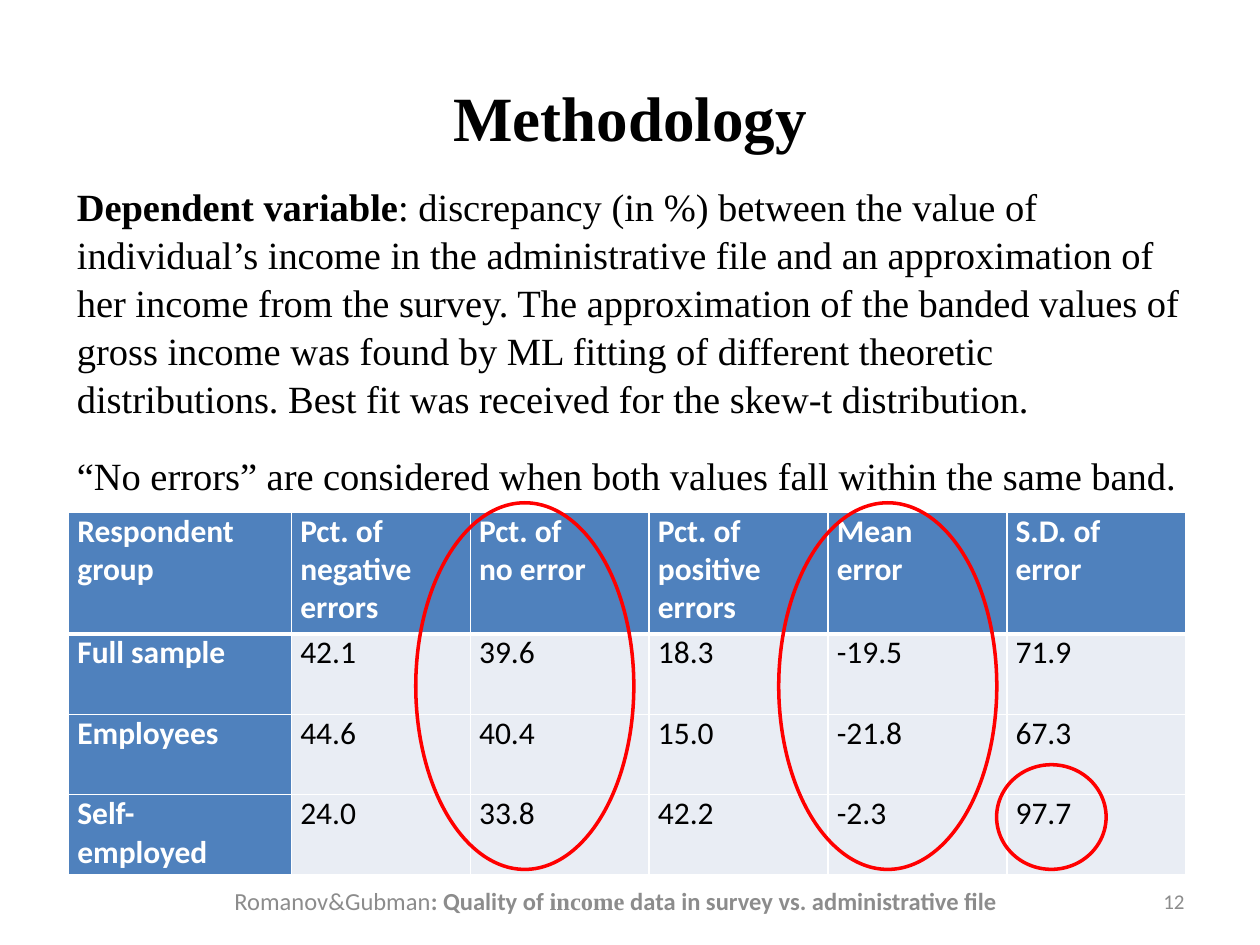
from pptx import Presentation
from pptx.dml.color import RGBColor
from pptx.enum import shapes, text
from pptx.oxml import parse_xml
from pptx.oxml.ns import nsdecls
from pptx.util import Pt


def color(code):
    return RGBColor.from_string(code)


def write(para, words, **form):
    """Add a run to the paragraph with the given font values."""
    run = para.add_run()
    run.text = words
    run.font.color.rgb = color(form.pop("ink", "000000"))
    for key, value in form.items():
        setattr(run.font, key, value)


deck = Presentation()
deck.slide_width, deck.slide_height = Pt(720), Pt(540)
slide = deck.slides.add_slide(deck.slide_layouts[1])
serif, sans = "Times New Roman", "Calibri"

# Title and body
title, body = slide.placeholders
places = [(title, (36, 21.6, 648, 90)), (body, (36.7, 100.1, 648, 170))]
for holder, place in places:
    for side, value in zip(("left", "top", "width", "height"), place):
        setattr(holder, side, Pt(value))
title.text_frame.vertical_anchor = text.MSO_ANCHOR.MIDDLE
write(title.text_frame.paragraphs[0], "Methodology",
      name=serif, size=Pt(36), bold=True)

points = [
    [("Dependent variable", True),
     (": discrepancy (in %) between the value of individual’s income in the "
      "administrative file and an approximation of her income from the survey. "
      "The approximation of the banded values of gross income was found by ML "
      "fitting of different theoretic distributions. Best fit was received for "
      "the skew-t distribution.", False)],
    [("“No errors” are considered when both values fall within the same band.",
      False)],
]
frame = body.text_frame
frame.auto_size = text.MSO_AUTO_SIZE.NONE
spacing = {"space_before": Pt(4.4), "space_after": Pt(12), "line_spacing": 1.04}
for i, point in enumerate(points):
    para = frame.add_paragraph() if i else frame.paragraphs[0]
    for key, value in spacing.items():
        setattr(para, key, value)
    props = para._p.get_or_add_pPr()
    props.set("marL", "0")
    props.set("indent", "0")
    props.append(parse_xml(f"<a:buNone {nsdecls('a')}/>"))
    for words, bold in point:
        write(para, words, name=serif, size=Pt(22), bold=bold)

# Footer and page number
center, right = text.PP_ALIGN.CENTER, text.PP_ALIGN.RIGHT
notes = [
    (65.5, 572.4, center, 14, [
        ("Romanov&Gubman", sans, False), (": Quality of ", sans, True),
        ("income", serif, True),
        (" data in survey vs. administrative file", sans, True)]),
    (643.7, 40.3, right, 12, [("12", sans, False)]),
]
for left, width, align, size, runs in notes:
    frame = slide.shapes.add_textbox(
        Pt(left), Pt(500.4), Pt(width), Pt(28.8)).text_frame
    frame.word_wrap = True
    frame.vertical_anchor = text.MSO_ANCHOR.MIDDLE
    para = frame.paragraphs[0]
    para.alignment = align
    for words, font, bold in runs:
        write(para, words, name=font, size=Pt(size), bold=bold, ink="8C8C8C")

# Error table
rows = [
    ["Respondent group", "Pct. of negative errors", "Pct. of no error",
     "Pct. of positive errors", "Mean error", "S.D. of error"],
    ["Full sample", "42.1", "39.6", "18.3", "-19.5", "71.9"],
    ["Employees", "44.6", "40.4", "15.0", "-21.8", "67.3"],
    ["Self-employed", "24.0", "33.8", "42.2", "-2.3", "97.7"],
]
table = slide.shapes.add_table(
    4, 6, Pt(39.2), Pt(292.6), Pt(638.4), Pt(207.6)).table
for i, col in enumerate(table.columns):
    col.width = Pt(102.2 if i else 127.4)
for i, row in enumerate(table.rows):
    row.height = Pt(46 if i else 69.6)
for r, row in enumerate(rows):
    for c, words in enumerate(row):
        cell = table.cell(r, c)
        head = r == 0 or c == 0
        margins = {"left": 5, "top": 0, "right": 28 if head else 5, "bottom": 0}
        for side, value in margins.items():
            setattr(cell, f"margin_{side}", Pt(value))
        write(cell.text_frame.paragraphs[0], words, name=sans, size=Pt(18),
              bold=head, ink="FFFFFF" if head else "000000")
        props = cell._tc.get_or_add_tcPr()
        for side in "LRTB":
            thick = (side, r) in (("B", 0), ("T", 1))
            props.append(parse_xml(
                f'<a:ln{side} {nsdecls("a")} w="{Pt(3 if thick else 1)}">'
                '<a:solidFill><a:srgbClr val="FFFFFF"/></a:solidFill>'
                f'</a:ln{side}>'))
        cell.fill.solid()
        cell.fill.fore_color.rgb = color("4F81BD" if head else "E9EDF4")

# Red rings around key figures
rings = [(237.6, 287.3, 124.6, 209.5), (445, 287.3, 124.6, 209.5),
         (569.5, 437, 62.6, 59.8)]
for place in rings:
    ring = slide.shapes.add_shape(shapes.MSO_SHAPE.OVAL, *map(Pt, place))
    ring.shadow.inherit = False
    ring.fill.background()
    ring.line.color.rgb = color("FF0000")
    ring.line.width = Pt(2)

deck.save("out.pptx")
